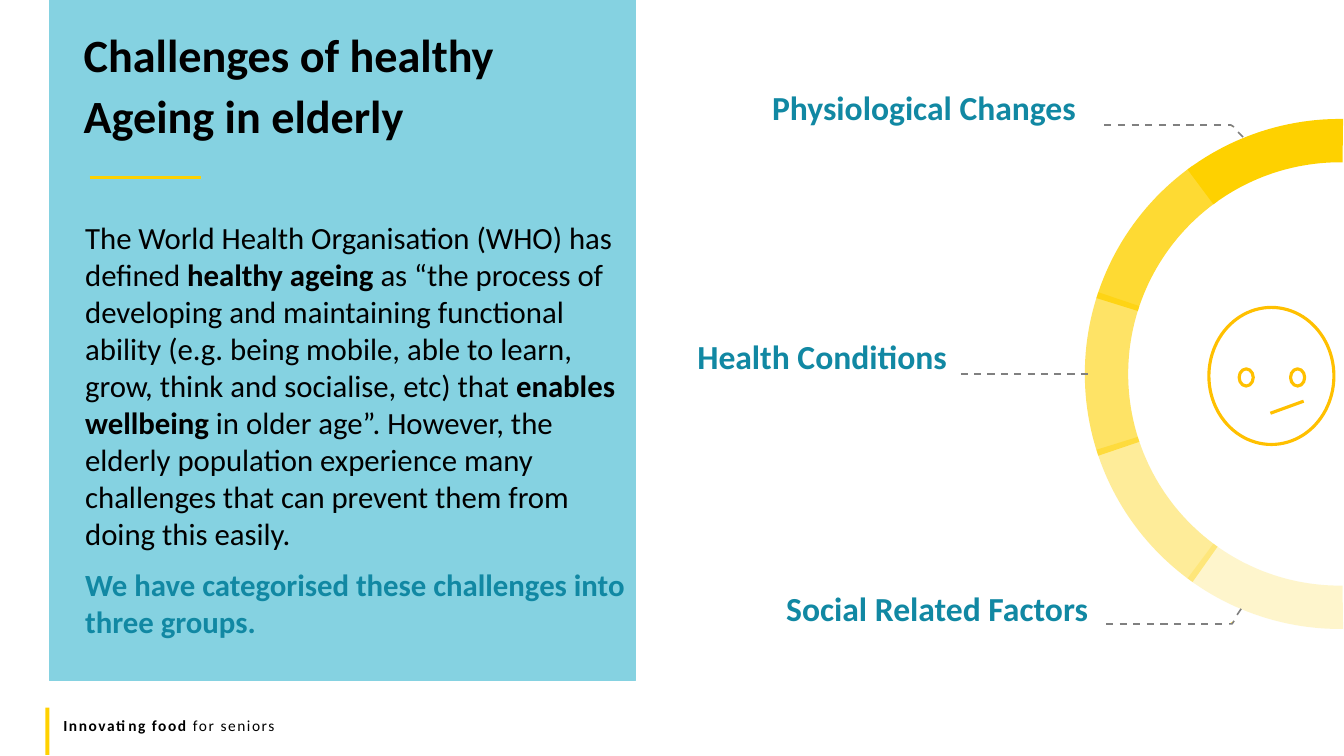
"""Build the slide on the challenges of healthy ageing in elderly people."""
from math import cos, radians, sin

from lxml import etree
from pptx import Presentation
from pptx.dml.color import RGBColor
from pptx.enum.shapes import MSO_CONNECTOR, MSO_SHAPE
from pptx.enum.text import MSO_ANCHOR, MSO_AUTO_SIZE, PP_ALIGN
from pptx.oxml.ns import qn
from pptx.util import Inches, Pt

COLORS = {
    "panel": "85D2E1", "teal": "1188A3", "yellow": "FFD100", "ring": "FED100",
    "face": "FFC000", "leader": "808080", "text": "000000",
}
PANEL_LEFT, PANEL_WIDTH = 0.49, 5.81
TITLE_HEIGHT, PANEL_HEIGHT = 1.61, 6.75
RING_X, RING_Y, RING_OUTER, RING_INNER = 13.29, 3.71, 2.53, 2.1
SEGMENT_ANGLE, OVERLAP = 36, 0.7
DASH, DASH_STEP = 0.07, 0.14


def write(paragraph, parts, size, color):
    """Fill a paragraph with (text, bold) runs of one size and colour."""
    for text, bold in parts:
        run = paragraph.add_run()
        run.text = text
        run.font.bold = bold
    paragraph.font.name = "Calibri"
    paragraph.font.size = Pt(size)
    paragraph.font.color.rgb = RGBColor.from_string(COLORS[color])


def style(shape, fill=None, line=None, width=0.75):
    """Set fill and line of a shape by colour name, without a shadow."""
    if fill:
        shape.fill.solid()
        shape.fill.fore_color.rgb = RGBColor.from_string(COLORS[fill])
    elif hasattr(shape, "fill"):
        shape.fill.background()
    if line:
        shape.line.color.rgb = RGBColor.from_string(COLORS[line])
        shape.line.width = Pt(width)
    else:
        shape.line.fill.background()
    if hasattr(shape, "shadow"):
        shape.shadow.inherit = False
    else:
        etree.SubElement(shape._element.spPr, qn("a:effectLst"))


prs = Presentation()
prs.slide_width, prs.slide_height = Inches(13.33), Inches(7.5)
slide = prs.slides.add_slide(prs.slide_layouts[5])
shapes = slide.shapes

title = shapes.title
title.left, title.top = Inches(PANEL_LEFT), 0
title.width, title.height = Inches(PANEL_WIDTH), Inches(TITLE_HEIGHT)
title.fill.solid()
title.fill.fore_color.rgb = RGBColor.from_string(COLORS["panel"])
title.line.color.rgb = RGBColor.from_string(COLORS["panel"])
title.line.width = Pt(0.75)
heading = title.text_frame
heading.auto_size = MSO_AUTO_SIZE.NONE
heading.word_wrap = True
heading.vertical_anchor = MSO_ANCHOR.MIDDLE
heading.margin_left, heading.margin_top = Inches(0.34), Inches(0.07)
heading.paragraphs[0].alignment = PP_ALIGN.LEFT
heading.paragraphs[0].line_spacing = 1.1
write(heading.paragraphs[0], [("Challenges of healthy Ageing in elderly", True)], 33, "text")

panel = shapes.add_shape(MSO_SHAPE.RECTANGLE, Inches(PANEL_LEFT), Inches(TITLE_HEIGHT),
                         Inches(PANEL_WIDTH), Inches(PANEL_HEIGHT - TITLE_HEIGHT))
style(panel, "panel", "panel")
definition = panel.text_frame
definition.word_wrap = True
definition.vertical_anchor = MSO_ANCHOR.TOP
definition.margin_left, definition.margin_top = Pt(25.5), Pt(40.5)
who = definition.paragraphs[0]
who.alignment = PP_ALIGN.LEFT
write(who, [
    ("The World Health Organisation (WHO) has defined ", False),
    ("healthy ageing ", True),
    ("as “the process of developing and maintaining functional ability (e.g. being mobile, "
     "able to learn, grow, think and socialise, etc) that ", False),
    ("enables wellbeing", True),
    (" in older age”. However, the elderly population experience many challenges that can "
     "prevent them from doing this easily.", False),
], 22, "text")
groups = definition.add_paragraph()
groups.alignment = PP_ALIGN.LEFT
groups.space_before = Pt(10)
write(groups, [("We have categorised these challenges into three groups.", True)], 22, "teal")

for index, opacity in enumerate([100, 80, 60, 40, 20]):
    start = 90 + index * SEGMENT_ANGLE - OVERLAP
    angles = [start + (SEGMENT_ANGLE + 2 * OVERLAP) * step / 24 for step in range(25)]
    edge = [(RING_OUTER, angle) for angle in angles]
    edge += [(RING_INNER, angle) for angle in reversed(angles)]
    points = [(Inches(RING_X + radius * cos(radians(angle))),
               Inches(RING_Y - radius * sin(radians(angle)))) for radius, angle in edge]
    outline = shapes.build_freeform(*points[0])
    outline.add_line_segments(points[1:], close=True)
    segment = outline.convert_to_shape()
    style(segment, "ring")
    tint = segment._element.spPr.find(qn("a:solidFill"))[0]
    etree.SubElement(tint, qn("a:alpha"), val=str(opacity * 1000))

dashes = [((12.28, 1.31), (12.33, 1.36)), ((12.27, 6.1), (12.31, 6.04))]
for first, last, y, count in [(10.95, 12.11, 1.24, 9), (9.53, 10.79, 3.71, 10), (10.97, 12.12, 6.19, 9)]:
    step = (last - first - DASH) / (count - 1)
    dashes += [((first + step * n, y), (first + step * n + DASH, y)) for n in range(count)]
for start, end in dashes:
    dash = shapes.add_connector(MSO_CONNECTOR.STRAIGHT, *map(Inches, start + end))
    style(dash, line="leader", width=1.13)

for bend in [
    [(12.18, 1.24), (12.21, 1.24), (12.24, 1.26)],
    [(12.19, 6.19), (12.22, 6.19), (12.24, 6.16)],
]:
    points = [(Inches(x), Inches(y)) for x, y in bend]
    outline = shapes.build_freeform(*points[0])
    outline.add_line_segments(points[1:], close=False)
    style(outline.convert_to_shape(), "yellow", "leader", 1.13)

for label, left, top, width in [
    ("Health Conditions", 5.88, 3.33, 3.61),
    ("Physiological Changes", 7.16, 0.86, 3.61),
    ("Social Related Factors", 7.02, 5.83, 3.87),
]:
    challenge = shapes.add_textbox(Inches(left), Inches(top), Inches(width), Inches(0.48)).text_frame
    challenge.word_wrap = True
    challenge.paragraphs[0].alignment = PP_ALIGN.RIGHT
    challenge.paragraphs[0].line_spacing = 0.9
    write(challenge.paragraphs[0], [(label, True)], 24, "teal")

for left, top, width, height in [
    (11.99, 3.05, 1.24, 1.36),
    (12.8, 3.66, 0.14, 0.17),
    (12.29, 3.66, 0.14, 0.17),
]:
    oval = shapes.add_shape(MSO_SHAPE.OVAL, Inches(left), Inches(top), Inches(width), Inches(height))
    style(oval, line="face", width=2.25)

for color, start, end in [
    ("face", (12.6, 4.1), (12.93, 3.98)),
    ("ring", (0.89, 1.76), (1.99, 1.76)),
]:
    stroke = shapes.add_connector(MSO_CONNECTOR.STRAIGHT, *map(Inches, start + end))
    style(stroke, line=color, width=2.25)

footer_bar = shapes.add_shape(MSO_SHAPE.RECTANGLE, Inches(0.45), Inches(7.02), Inches(0.04), Inches(0.47))
style(footer_bar, "yellow")
footer = shapes.add_textbox(Inches(0.53), Inches(7.06), Inches(12), Inches(0.29)).text_frame
footer.word_wrap = True
footer.auto_size = MSO_AUTO_SIZE.SHAPE_TO_FIT_TEXT
write(footer.paragraphs[0], [("Innovating food ", True), ("for seniors", False)], 11, "text")
for run in footer.paragraphs[0].runs:
    run.font._element.set("spc", "110")

prs.save("out.pptx")
